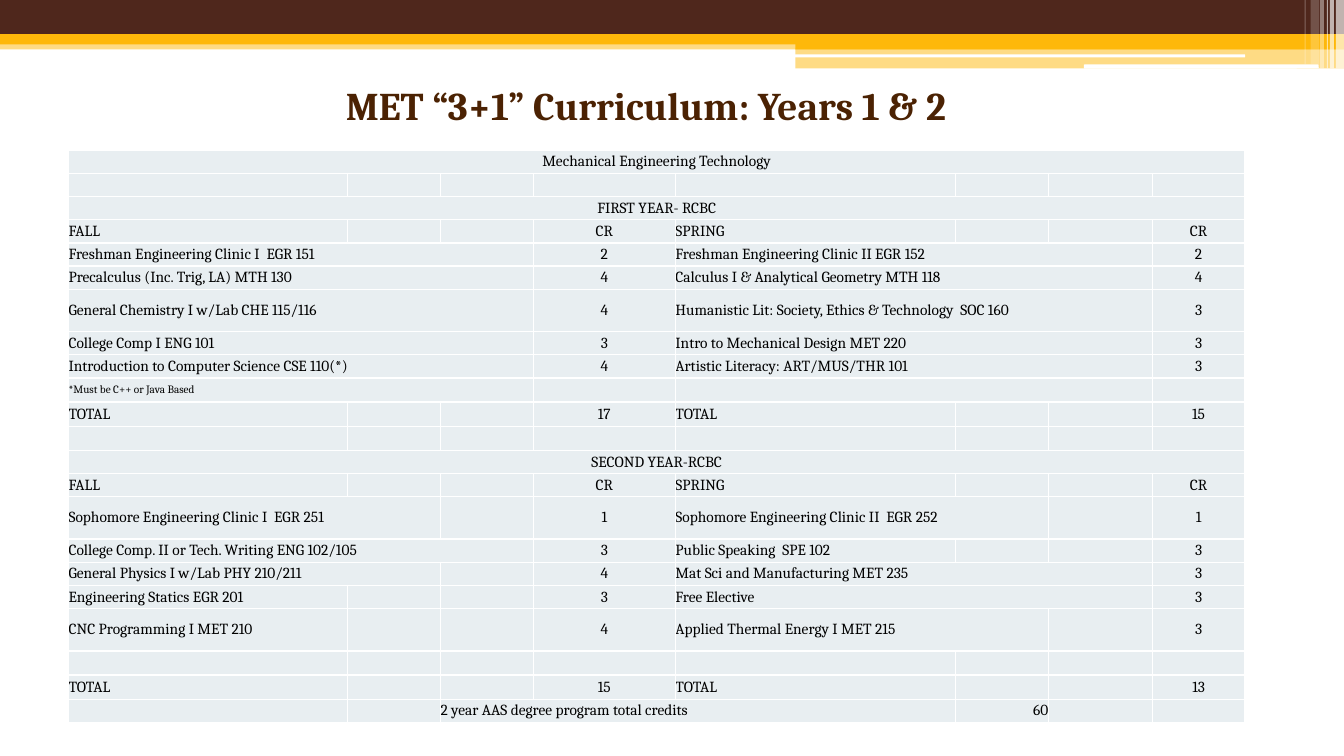
from dataclasses import dataclass

from lxml import etree
from pptx import Presentation
from pptx.dml.color import RGBColor
from pptx.enum.shapes import MSO_SHAPE
from pptx.enum.text import MSO_ANCHOR, PP_ALIGN
from pptx.oxml.ns import qn
from pptx.util import Inches, Pt

RECTANGLE, ROUNDED = MSO_SHAPE.RECTANGLE, MSO_SHAPE.ROUNDED_RECTANGLE
LEFT, CENTER, RIGHT = PP_ALIGN.LEFT, PP_ALIGN.CENTER, PP_ALIGN.RIGHT
MIDDLE = MSO_ANCHOR.MIDDLE

TITLE = "MET “3+1” Curriculum: Years 1 & 2"
NOTE = "*Must be C++ or Java Based"
BLANK = (("", 1, ""), ("", 1, ""))
HEADINGS = (("FALL", 1, "CR"), ("SPRING", 1, "CR"))

ROWS = [
    "Mechanical Engineering Technology",
    BLANK,
    "FIRST YEAR- RCBC",
    HEADINGS,
    (("Freshman Engineering Clinic I  EGR 151", 3, "2"), ("Freshman Engineering Clinic II EGR 152", 3, "2")),
    (("Precalculus (Inc. Trig, LA) MTH 130", 3, "4"), ("Calculus I & Analytical Geometry MTH 118", 3, "4")),
    (("General Chemistry I w/Lab CHE 115/116", 3, "4"),
     ("Humanistic Lit: Society, Ethics & Technology  SOC 160", 3, "3")),
    (("College Comp I ENG 101", 3, "3"), ("Intro to Mechanical Design MET 220", 3, "3")),
    (("Introduction to Computer Science CSE 110(*)", 3, "4"), ("Artistic Literacy: ART/MUS/THR 101", 3, "3")),
    ((NOTE, 3, ""), ("", 3, "")),
    (("TOTAL", 1, "17"), ("TOTAL", 1, "15")),
    BLANK,
    "SECOND YEAR-RCBC",
    HEADINGS,
    (("Sophomore Engineering Clinic I  EGR 251", 2, "1"), ("Sophomore Engineering Clinic II  EGR 252", 2, "1")),
    (("College Comp. II or Tech. Writing ENG 102/105", 3, "3"), ("Public Speaking  SPE 102", 1, "3")),
    (("General Physics I w/Lab PHY 210/211", 2, "4"), ("Mat Sci and Manufacturing MET 235", 3, "3")),
    (("Engineering Statics EGR 201", 1, "3"), ("Free Elective", 3, "3")),
    (("CNC Programming I MET 210", 1, "4"), ("Applied Thermal Energy I MET 215", 2, "3")),
    BLANK,
    (("TOTAL", 1, "15"), ("TOTAL", 1, "13")),
    [(2, 3, "2 year AAS degree program total credits", LEFT), (5, 1, "60", RIGHT)],
]


@dataclass(frozen=True)
class Theme:
    font: str = "Cambria"
    brown: str = "4F271C"
    gold: str = "FEB80A"
    white: str = "FFFFFF"
    title: str = "4B2203"
    text: str = "000000"
    cell: str = "E8EEF1"
    title_size: int = 28
    body_size: int = 11
    note_size: int = 8


THEME = Theme()
GRID = Inches(0.01)
WIDTH, HEIGHT = 1333, 750
TITLE_BOX = (243, 80, 795, 53)
TABLE_LEFT, TABLE_TOP = 68, 149
COLUMNS = (277, 92, 92, 141, 278, 92, 103, 92)
HALF = len(COLUMNS) // 2
ROW_HEIGHT = 23
ROW_HEIGHTS = {6: 42, 14: 42, 18: 42, 9: 24, 10: 24, 11: 24, 19: 24, 20: 24}

BANDS = [
    (RECTANGLE, (0, 40, WIDTH, 9), THEME.gold, 50),
    (RECTANGLE, (0, 0, WIDTH, 34), THEME.brown, 100),
    (RECTANGLE, (0, 34, WIDTH, 10), THEME.gold, 100),
    (RECTANGLE, (789, 39, 544, 10), THEME.gold, 100),
    (RECTANGLE, (789, 48, 544, 20), THEME.gold, 50),
    (ROUNDED, (788, 54, 447, 3), THEME.white, 100),
    (ROUNDED, (1075, 64, 233, 4), THEME.white, 100),
]
STRIPES = [(1325, 8, 68, 65), (1319, 4, 68, 65), (1316, 1, 68, 60),
           (1309, 4, 68, 40), (1300, 8, 64, 20), (1294, 1, 64, 30)]


def on_grid(box):
    return [value * GRID for value in box]


def write_text(frame, text, size=THEME.body_size, color=THEME.text, bold=False, align=LEFT, spacing=1.0):
    paragraph = frame.paragraphs[0]
    paragraph.alignment = align
    paragraph.line_spacing = spacing
    if not text:
        etree.SubElement(paragraph._p, qn("a:endParaRPr"), sz=str(size * 100))
        return
    run = paragraph.add_run()
    run.text = text
    run.font.name = THEME.font
    run.font.size = Pt(size)
    run.font.bold = bold
    run.font.color.rgb = RGBColor.from_string(color)


def add_band(slide, kind, box, color, opacity):
    shape = slide.shapes.add_shape(kind, *on_grid(box))
    shape.shadow.inherit = False
    shape.line.fill.background()
    shape.fill.solid()
    shape.fill.fore_color.rgb = RGBColor.from_string(color)
    if opacity < 100:
        fill_color = shape.fill._xPr.find(qn("a:solidFill"))[0]
        etree.SubElement(fill_color, qn("a:alpha"), val=str(opacity * 1000))


def add_title(slide):
    title = slide.shapes.title
    title.left, title.top, title.width, title.height = on_grid(TITLE_BOX)
    title.text_frame.word_wrap = True
    title.text_frame.vertical_anchor = MIDDLE
    write_text(title.text_frame, TITLE, size=THEME.title_size, color=THEME.title,
               bold=True, align=CENTER, spacing=0.9)


def style_cell(cell):
    cell.fill.solid()
    cell.fill.fore_color.rgb = RGBColor.from_string(THEME.cell)
    cell.vertical_anchor = MIDDLE
    cell.margin_left = cell.margin_right = cell.margin_top = cell.margin_bottom = 0
    properties = cell._tc.get_or_add_tcPr()
    for position, side in enumerate(("lnL", "lnR", "lnT", "lnB")):
        border = etree.Element(qn(f"a:{side}"), w=str(Pt(1)))
        fill = etree.SubElement(border, qn("a:solidFill"))
        etree.SubElement(fill, qn("a:srgbClr"), val=THEME.white)
        properties.insert(position, border)


def place_row(row):
    if isinstance(row, str):
        return [(0, len(COLUMNS), row, CENTER)]
    if isinstance(row, list):
        return row
    placed = []
    for start, (course, span, credits) in zip((0, HALF), row):
        placed += [(start, span, course, LEFT), (start + HALF - 1, 1, credits, CENTER)]
    return placed


def add_curriculum(slide):
    heights = [ROW_HEIGHTS.get(index, ROW_HEIGHT) for index in range(len(ROWS))]
    box = (TABLE_LEFT, TABLE_TOP, sum(COLUMNS), sum(heights))
    table = slide.shapes.add_table(len(ROWS), len(COLUMNS), *on_grid(box)).table
    table.first_row = table.horz_banding = False
    for column, width in zip(table.columns, COLUMNS):
        column.width = width * GRID
    for index, (row, height) in enumerate(zip(ROWS, heights)):
        table.rows[index].height = height * GRID
        placed = {column: (span, text, align) for column, span, text, align in place_row(row)}
        for column in range(len(COLUMNS)):
            cell = table.cell(index, column)
            style_cell(cell)
            span, text, align = placed.get(column, (1, "", LEFT))
            size = THEME.note_size if text == NOTE else THEME.body_size
            write_text(cell.text_frame, text, size=size, align=align)
            if span > 1:
                cell.merge(table.cell(index, column + span - 1))


def main():
    presentation = Presentation()
    presentation.slide_width, presentation.slide_height = on_grid((WIDTH, HEIGHT))
    slide = presentation.slides.add_slide(presentation.slide_layouts[5])
    for band in BANDS:
        add_band(slide, *band)
    for left, width, height, opacity in STRIPES:
        add_band(slide, RECTANGLE, (left, 0, width, height), THEME.white, opacity)
    add_title(slide)
    add_curriculum(slide)
    presentation.save("out.pptx")


if __name__ == "__main__":
    main()
